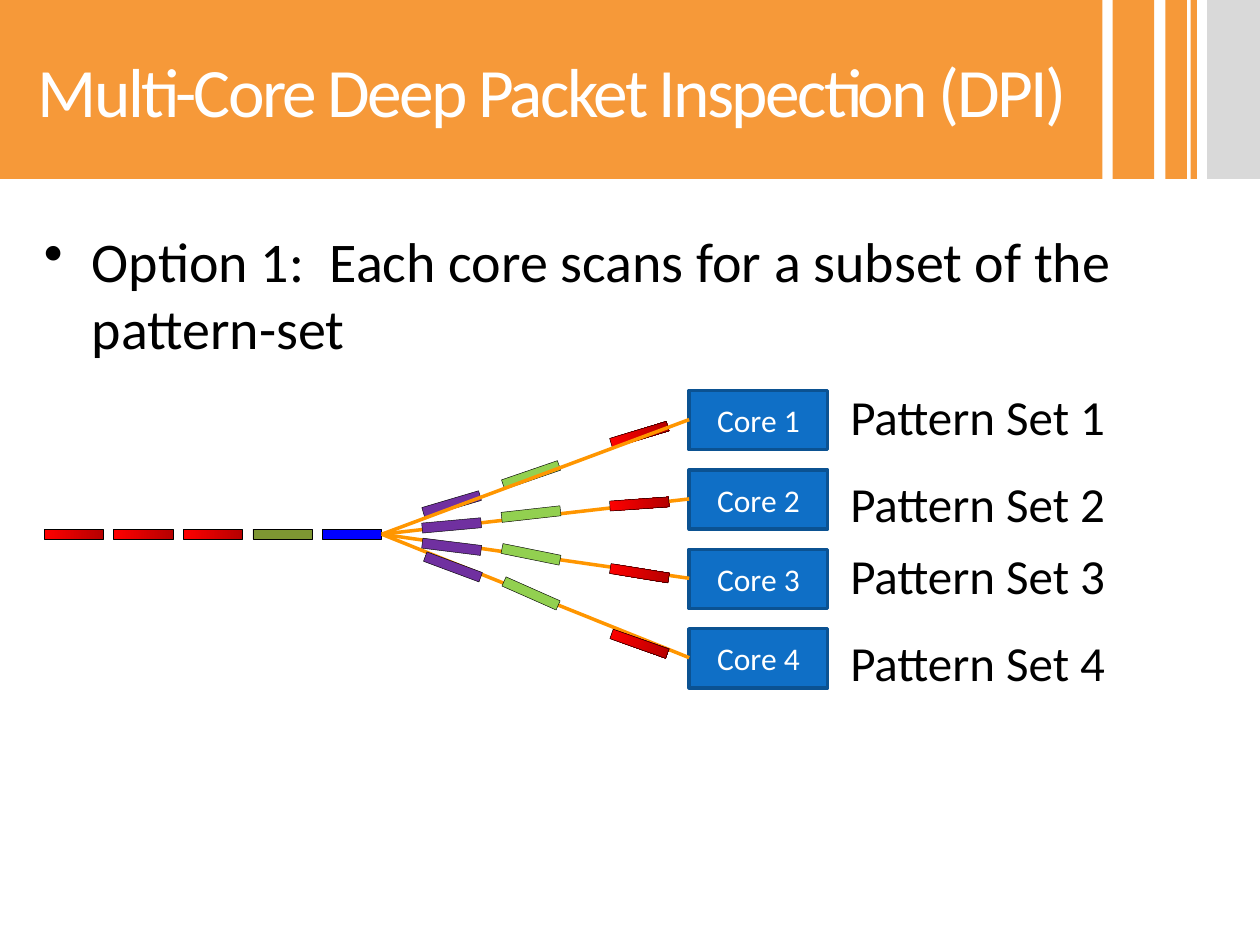
from dataclasses import dataclass

from lxml.etree import SubElement
from pptx import Presentation
from pptx.dml.color import RGBColor
from pptx.enum.shapes import MSO_CONNECTOR, MSO_SHAPE
from pptx.enum.text import MSO_ANCHOR, PP_ALIGN
from pptx.oxml.ns import qn
from pptx.util import Inches, Pt

ORANGE, RED, GREEN, PURPLE = "F69939", "FF0000", "92D050", "7030A0"
DARK_RED = "B60000"
FONT = "Calibri"


@dataclass
class Box:
    left: float
    top: float
    width: float
    height: float

    def lengths(self) -> list:
        return [Inches(v) for v in (self.left, self.top, self.width, self.height)]


@dataclass
class Packet:
    left: float
    top: float
    color: str
    turn: float = 0


@dataclass
class Core:
    label_top: float
    packets: list[Packet]


def rgb(code: str) -> RGBColor:
    return RGBColor.from_string(code)


def add_rect(box: Box, color: str, edge: str = "", weight: float = 0):
    rect = slide.shapes.add_shape(MSO_SHAPE.RECTANGLE, *box.lengths())
    rect.shadow.inherit = False
    rect.fill.solid()
    rect.fill.fore_color.rgb = rgb(color)
    if edge:
        rect.line.color.rgb = rgb(edge)
        rect.line.width = Pt(weight)
    else:
        rect.line.fill.background()
    return rect


def set_text(shape, text: str, size: float, color: str, align=PP_ALIGN.LEFT):
    para = shape.text_frame.paragraphs[0]
    para.text = text
    para.alignment = align
    para.font.name = FONT
    para.font.size = Pt(size)
    para.font.color.rgb = rgb(color)
    return para


def add_text(box: Box, text: str, size: float, wrap: bool):
    area = slide.shapes.add_textbox(*box.lengths())
    area.text_frame.word_wrap = wrap
    return set_text(area, text, size, "000000")


def add_packet(packet: Packet) -> None:
    box = Box(packet.left, packet.top, 0.47, 0.08)
    rect = add_rect(box, packet.color, "000000", 0.25)
    rect.rotation = packet.turn
    if packet.color == RED:
        rect.fill.gradient()
        rect.fill.gradient_angle = 0
        for stop, shade in zip(rect.fill.gradient_stops, (RED, DARK_RED)):
            stop.color.rgb = rgb(shade)


def add_link(end: float) -> None:
    link = slide.shapes.add_connector(
        MSO_CONNECTOR.STRAIGHT, Inches(3.03), Inches(4.24), Inches(5.47), Inches(end))
    link.line.color.rgb = rgb("FF9600")
    link.line.width = Pt(2)
    SubElement(link._element.spPr, qn("a:effectLst"))


deck = Presentation()
deck.slide_width, deck.slide_height = Inches(10), Inches(7.5)
slide = deck.slides.add_slide(deck.slide_layouts[6])

# Header stripes and title
for left, width, color in [(8.83, 0.33, ORANGE), (9.25, 0.17, ORANGE),
                           (9.45, 0.05, ORANGE), (9.58, 0.42, "D9D9D9")]:
    add_rect(Box(left, 0, width, 1.42), color)
title = add_rect(Box(0, 0, 8.75, 1.42), ORANGE)
title.text_frame.margin_left = Inches(0.3)
title.text_frame.vertical_anchor = MSO_ANCHOR.MIDDLE
head = set_text(title, "Multi-Core Deep Packet Inspection (DPI)", 39.6, "FFFFFF")
head.runs[0].font._element.set("spc", "-150")

# Bullet
point = add_text(Box(0.25, 1.75, 9.25, 4.95),
                 "Option 1:  Each core scans for a subset of the pattern-set", 32, True)
point.space_before = Pt(6.4)
props = point._p.get_or_add_pPr()
props.set("marL", str(Inches(0.38)))
props.set("indent", str(Inches(-0.38)))
mark = props.makeelement(qn("a:buChar"), {"char": "•"})
props.insert_element_before(mark, "a:tabLst", "a:defRPr", "a:extLst")

# Incoming packets
for i, color in enumerate([RED, RED, RED, "7E9632", "0000FF"]):
    add_packet(Packet(0.35 + 0.5525 * i, 4.2, color))

# Cores, each with the packets on its link
cores = [
    Core(3.02, [Packet(3.35, 3.96, PURPLE, 343.5), Packet(3.98, 3.73, GREEN, 341),
                Packet(4.84, 3.41, RED, 343.2)]),
    Core(3.71, [Packet(3.35, 4.13, PURPLE, 354.8), Packet(3.98, 4.04, GREEN, 353.6),
                Packet(4.84, 3.96, RED, 355.9)]),
    Core(4.28, [Packet(3.35, 4.3, PURPLE, 7.1), Packet(3.98, 4.36, GREEN, 11.4),
                Packet(4.84, 4.51, RED, 9.2)]),
    Core(4.97, [Packet(3.36, 4.46, PURPLE, 20.4), Packet(3.98, 4.67, GREEN, 23.9),
                Packet(4.84, 5.07, RED, 19.5)]),
]
for i, core in enumerate(cores):
    box = Box(5.47, 3.1 + 0.63 * i, 1.1, 0.47)
    rect = add_rect(box, "0F6FC6", "0B5292", 2)
    rect.text_frame.vertical_anchor = MSO_ANCHOR.MIDDLE
    set_text(rect, f"Core {i + 1}", 18, "FFFFFF", PP_ALIGN.CENTER)
    add_text(Box(6.65, core.label_top, 2.26, 0.57), f"Pattern Set {i + 1}", 28, False)

# The first core's packets lie under the links, the others on top
for packet in cores[0].packets:
    add_packet(packet)
for i in range(len(cores)):
    add_link(3.33 + 0.63 * i)
for core in cores[1:]:
    for packet in core.packets:
        add_packet(packet)

deck.save("out.pptx")
